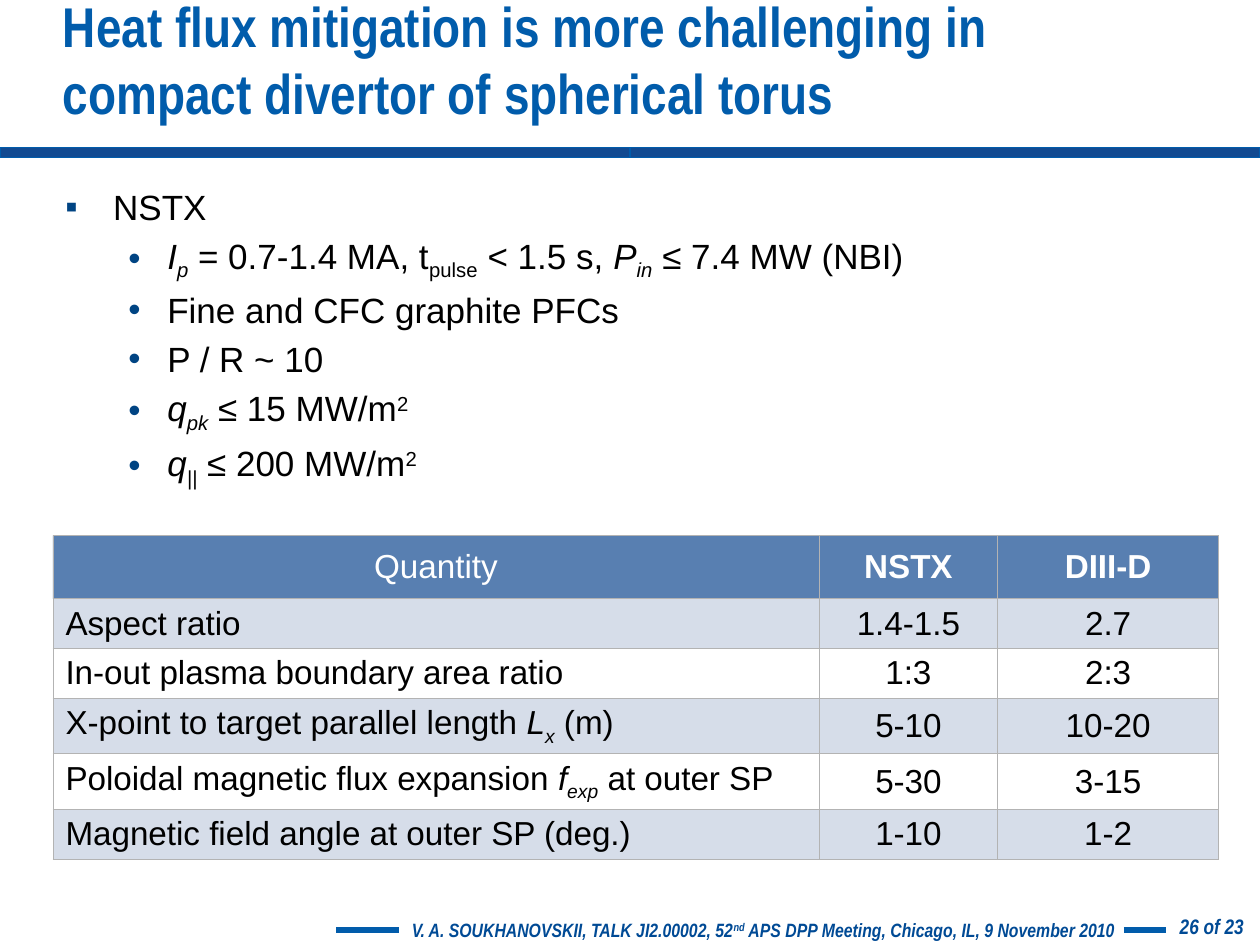
from lxml import etree
from pptx import Presentation
from pptx.dml.color import RGBColor
from pptx.enum.shapes import MSO_CONNECTOR, MSO_SHAPE
from pptx.enum.text import MSO_ANCHOR, PP_ALIGN
from pptx.oxml.ns import qn
from pptx.util import Inches, Pt

LEFT, CENTER, RIGHT = PP_ALIGN.LEFT, PP_ALIGN.CENTER, PP_ALIGN.RIGHT
TOP, MIDDLE, BOTTOM = MSO_ANCHOR.TOP, MSO_ANCHOR.MIDDLE, MSO_ANCHOR.BOTTOM
RECTANGLE = MSO_SHAPE.RECTANGLE
STRAIGHT = MSO_CONNECTOR.STRAIGHT

BASELINES = {"_": "-25000", "^": "30000"}

TITLE = "Heat flux mitigation is more challenging in compact divertor of spherical torus"
FOOTER = [
    ("V. A. SOUKHANOVSKII, TALK JI2.00002, 52", ""),
    ("nd", "^"),
    (" APS DPP Meeting, Chicago, IL, 9 November 2010", ""),
]
PARAMETERS = [
    [("I", "i"), ("p", "i_"), (" = 0.7-1.4 MA, t", ""), ("pulse", "_"), (" < 1.5 s, ", ""),
     ("P", "i"), ("in", "i_"), (" ≤ 7.4 MW (NBI)", "")],
    "Fine and CFC graphite PFCs",
    "P / R ~ 10",
    [("q", "i"), ("pk", "i_"), (" ≤ 15 MW/m", ""), ("2", "^")],
    [("q", "i"), ("||", "i_"), (" ≤ 200 MW/m", ""), ("2", "^")],
]
COMPARISON = [
    ("Quantity", "NSTX", "DIII-D"),
    ("Aspect ratio", "1.4-1.5", "2.7"),
    ("In-out plasma boundary area ratio", "1:3", "2:3"),
    ([("X-point to target parallel length ", ""), ("L", "i"), ("x", "i_"), (" (m)", "")],
     "5-10", "10-20"),
    ([("Poloidal magnetic flux expansion ", ""), ("f", "i"), ("exp", "i_"),
      (" at outer SP", "")], "5-30", "3-15"),
    ("Magnetic field angle at outer SP (deg.)", "1-10", "1-2"),
]


def color(value):
    return RGBColor.from_string(value)


def add_bullet(para, mark, tint, margin, hanging):
    props = para._p.get_or_add_pPr()
    props.set("marL", str(Inches(margin)))
    props.set("indent", str(-Inches(hanging)))
    paint = etree.SubElement(props, qn("a:buClr"))
    etree.SubElement(paint, qn("a:srgbClr"), val=tint)
    etree.SubElement(props, qn("a:buFont"), typeface="Arial")
    etree.SubElement(props, qn("a:buChar"), char=mark)


def write(para, text, size=20, face="Arial", tint="000000", bold=False, italic=False,
          align=LEFT, before=0, spacing=None):
    para.alignment = align
    para.space_before = Pt(before)
    if spacing:
        para.line_spacing = spacing
    pieces = [(text, "")] if isinstance(text, str) else text
    for words, marks in pieces:
        span = para.add_run()
        span.text = words
        span.font.name = face
        span.font.size = Pt(size)
        span.font.bold = bold
        span.font.italic = italic or "i" in marks
        span.font.color.rgb = color(tint)
        for mark, baseline in BASELINES.items():
            if mark in marks:
                span._r.get_or_add_rPr().set("baseline", baseline)


class Page:
    """Builds the elements of one slide in the house style."""

    blue, navy, ink, bullet = "015CAB", "124A91", "004A95", "004483"
    stripe, white, grid = "D6DDE9", "FFFFFF", "B3B3B3"
    narrow = "Arial Narrow"

    def __init__(self, deck):
        self.slide = deck.slides.add_slide(deck.slide_layouts[6])

    def text_box(self, left, top, width, height, anchor=TOP, inset=0.1):
        box = self.slide.shapes.add_textbox(
            Inches(left), Inches(top), Inches(width), Inches(height))
        frame = box.text_frame
        frame.word_wrap = True
        frame.vertical_anchor = anchor
        frame.margin_left = Inches(inset)
        return frame

    def label(self, text, place, anchor=TOP, inset=0.1, **style):
        frame = self.text_box(*place, anchor=anchor, inset=inset)
        write(frame.paragraphs[0], text, face=self.narrow, bold=True, **style)

    def bar(self, left, top, width, height):
        shape = self.slide.shapes.add_shape(
            RECTANGLE, Inches(left), Inches(top), Inches(width), Inches(height))
        shape.shadow.inherit = False
        shape.fill.solid()
        shape.fill.fore_color.rgb = color(self.navy)
        shape.line.color.rgb = color(self.blue)
        shape.line.width = Pt(0.75)

    def rule(self, start, end, height):
        line = self.slide.shapes.add_connector(
            STRAIGHT, Inches(start), Inches(height), Inches(end), Inches(height))
        line.line.color.rgb = color(self.blue)
        line.line.width = Pt(3.75)
        etree.SubElement(line._element.spPr, qn("a:effectLst"))

    def bullets(self, heading, items, place):
        frame = self.text_box(*place)
        first = frame.paragraphs[0]
        add_bullet(first, "▪", self.bullet, 0.38, 0.38)
        write(first, heading)
        for item in items:
            para = frame.add_paragraph()
            para.level = 1
            add_bullet(para, "•", self.bullet, 0.81, 0.31)
            write(para, item, before=4)

    def cell_style(self, cell, fill, alpha=None):
        props = cell._tc.get_or_add_tcPr()
        for side in ("a:lnL", "a:lnR", "a:lnT", "a:lnB"):
            edge = etree.SubElement(props, qn(side), w=str(Pt(0.5)))
            paint = etree.SubElement(edge, qn("a:solidFill"))
            etree.SubElement(paint, qn("a:srgbClr"), val=self.grid)
        cell.fill.solid()
        cell.fill.fore_color.rgb = color(fill)
        if alpha:
            tint = props.find(qn("a:solidFill")).find(qn("a:srgbClr"))
            etree.SubElement(tint, qn("a:alpha"), val=str(alpha * 1000))
        cell.vertical_anchor = MIDDLE
        cell.margin_top = cell.margin_bottom = Inches(0.04)

    def table(self, rows, left, top, widths, heights):
        table = self.slide.shapes.add_table(
            len(rows), len(widths), Inches(left), Inches(top),
            Inches(sum(widths)), Inches(sum(heights))).table
        for column, width in zip(table.columns, widths):
            column.width = Inches(width)
        for r, (row, height) in enumerate(zip(rows, heights)):
            table.rows[r].height = Inches(height)
            for c, text in enumerate(row):
                cell = table.cell(r, c)
                header = r == 0
                if header:
                    self.cell_style(cell, self.navy, alpha=70)
                else:
                    self.cell_style(cell, self.stripe if r % 2 else self.white)
                write(cell.text_frame.paragraphs[0], text, size=19,
                      tint=self.white if header else "000000", bold=header and c > 0,
                      align=CENTER if header or c else LEFT)


def main():
    deck = Presentation()
    deck.slide_width, deck.slide_height = Inches(10), Inches(7.5)
    page = Page(deck)
    page.label(FOOTER, (3.17, 7.24, 6, 0.29), size=11, tint=page.ink, italic=True)
    for left in (0, 5):
        page.bar(left, 1.17, 5, 0.08)
    for start, end in ((2.67, 3.17), (8.92, 9.25)):
        page.rule(start, end, 7.38)
    page.label("26 of 23", (9.25, 7.25, 0.72, 0.26), inset=0, size=12, tint=page.ink,
               italic=True, align=RIGHT, spacing=0.75)
    page.label(TITLE, (0.5, 0.16, 9, 0.89), anchor=BOTTOM, inset=0, size=32, tint=page.blue)
    page.bullets("NSTX", PARAMETERS, (0.42, 1.42, 7.83, 2.58))
    page.table(COMPARISON, 0.42, 4.25, (6.08, 1.42, 1.75), [0.5] + [0.35] * 5)
    deck.save("out.pptx")


if __name__ == "__main__":
    main()
